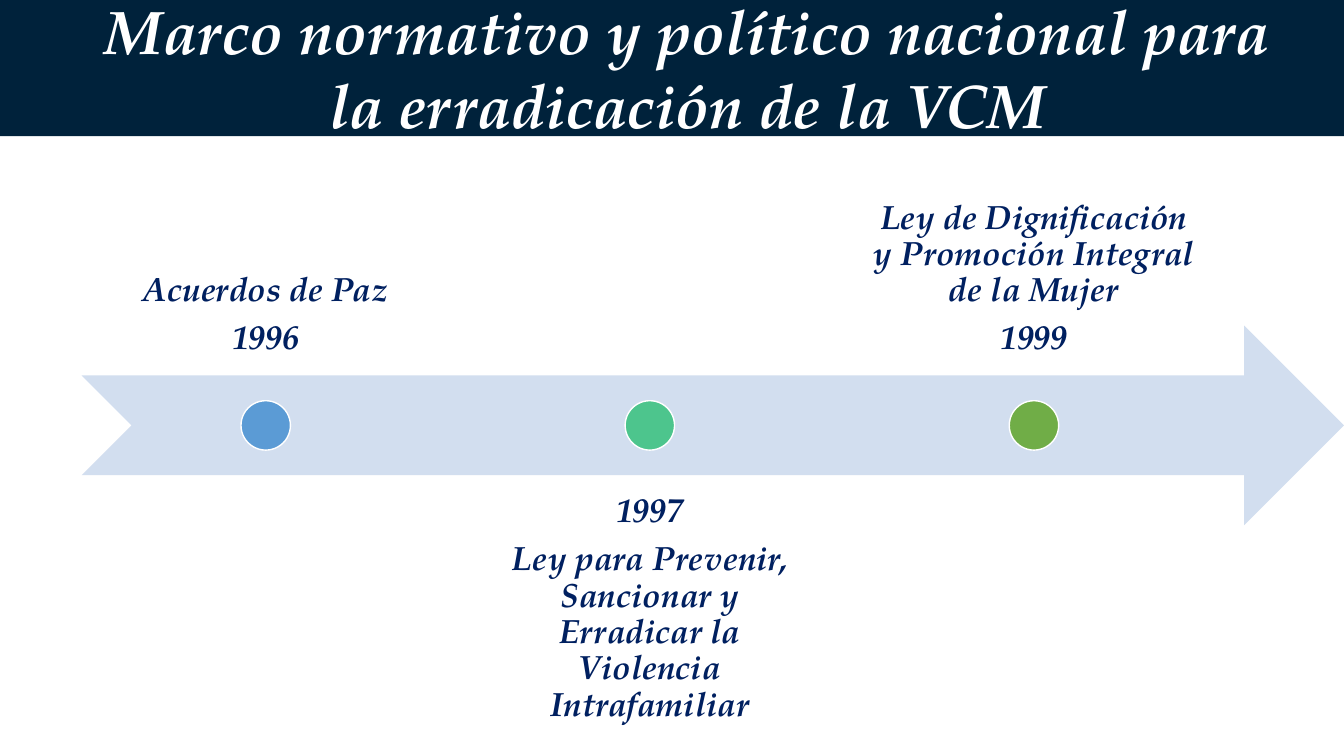
from pptx import Presentation
from pptx.dml.color import RGBColor
from pptx.enum.shapes import MSO_SHAPE as Shape
from pptx.enum.text import MSO_ANCHOR as Anchor, MSO_AUTO_SIZE as AutoSize, PP_ALIGN as Align
from pptx.util import Inches, Pt

FONT = "TeX Gyre Pagella"
COLORS = {
    "band": "00223B",
    "arrow": "D2DEEF",
    "text": "002060",
    "white": "FFFFFF",
    "blue": "5B9BD5",
    "teal": "4DC58D",
    "green": "70AD47",
}
TITLE = "Marco normativo y político nacional para la erradicación de la VCM"
MILESTONES = [
    ("1996", "Acuerdos de Paz", "blue"),
    ("1997", "Ley para Prevenir, Sancionar y Erradicar la Violencia Intrafamiliar", "teal"),
    ("1999", "Ley de Dignificación y Promoción Integral de la Mujer", "green"),
]


def add_span(para, text, size, color):
    """Add one centred bold italic run to a paragraph."""
    para.alignment = Align.CENTER
    span = para.add_run()
    span.text = text
    span.font.name = FONT
    span.font.size = Pt(size)
    span.font.bold = span.font.italic = True
    span.font.color.rgb = RGBColor.from_string(COLORS[color])


def add_figure(page, kind, left, top, width, height, fill, line=None):
    """Add a flat preset shape with an optional outline."""
    figure = page.shapes.add_shape(kind, Inches(left), Inches(top), Inches(width), Inches(height))
    figure.shadow.inherit = False
    figure.fill.solid()
    figure.fill.fore_color.rgb = RGBColor.from_string(COLORS[fill])
    if line:
        figure.line.color.rgb = RGBColor.from_string(COLORS[line])
        figure.line.width = Pt(1)
    else:
        figure.line.fill.background()
    return figure


def add_header(page, left, top, width, height):
    """Fill the header band and place the title over it."""
    band = add_figure(page, Shape.RECTANGLE, left, top, width, height, "band")
    title = page.shapes.title
    title.element.addprevious(band.element)
    title.left, title.top = Inches(left + 0.63), Inches(top + 0.26)
    title.width, title.height = Inches(width - 0.94), Inches(0.81)
    frame = title.text_frame
    frame.auto_size = AutoSize.NONE
    frame.word_wrap = True
    frame.vertical_anchor = Anchor.MIDDLE
    add_span(frame.paragraphs[0], TITLE, 44, "white")


def add_label(page, left, top, width, height, lines, anchor):
    """Write the lines of one milestone in a text box."""
    box = page.shapes.add_textbox(Inches(left), Inches(top), Inches(width), Inches(height))
    frame = box.text_frame
    frame.word_wrap = True
    frame.vertical_anchor = anchor
    frame.margin_left = frame.margin_right = Inches(0.19)
    frame.margin_top = frame.margin_bottom = Inches(0.19)
    for index, text in enumerate(lines):
        para = frame.paragraphs[0] if index == 0 else frame.add_paragraph()
        para.line_spacing = 0.9
        para.space_after = Pt(8.4)
        add_span(para, text, 24, "text")


def add_timeline(page, left, top, width, height):
    """Draw the arrow with milestones alternating above and below it."""
    arrow_height, label_width, step, dot = 1.98, 3.63, 3.81, 0.49
    arrow_top = top + (height - arrow_height) / 2
    add_figure(page, Shape.NOTCHED_RIGHT_ARROW, left, arrow_top, width, arrow_height, "arrow")
    for index, (year, name, color) in enumerate(MILESTONES):
        label_left = left + 0.01 + index * step
        if index % 2 == 0:
            label_top, lines, anchor = top, (name, year), Anchor.BOTTOM
        else:
            label_top, lines, anchor = top + height - arrow_height, (year, name), Anchor.TOP
        add_label(page, label_left, label_top, label_width, arrow_height, lines, anchor)
        dot_left = label_left + (label_width - dot) / 2
        dot_top = top + (height - dot) / 2
        add_figure(page, Shape.OVAL, dot_left, dot_top, dot, dot, color, "white")


def main():
    """Build the deck and save it."""
    deck = Presentation()
    deck.slide_width, deck.slide_height = Inches(13.33), Inches(7.5)
    page = deck.slides.add_slide(deck.slide_layouts[5])
    add_timeline(page, 0.81, 1.75, 12.52, 4.94)
    add_header(page, 0, 0, 13.33, 1.35)
    deck.save("out.pptx")


if __name__ == "__main__":
    main()
